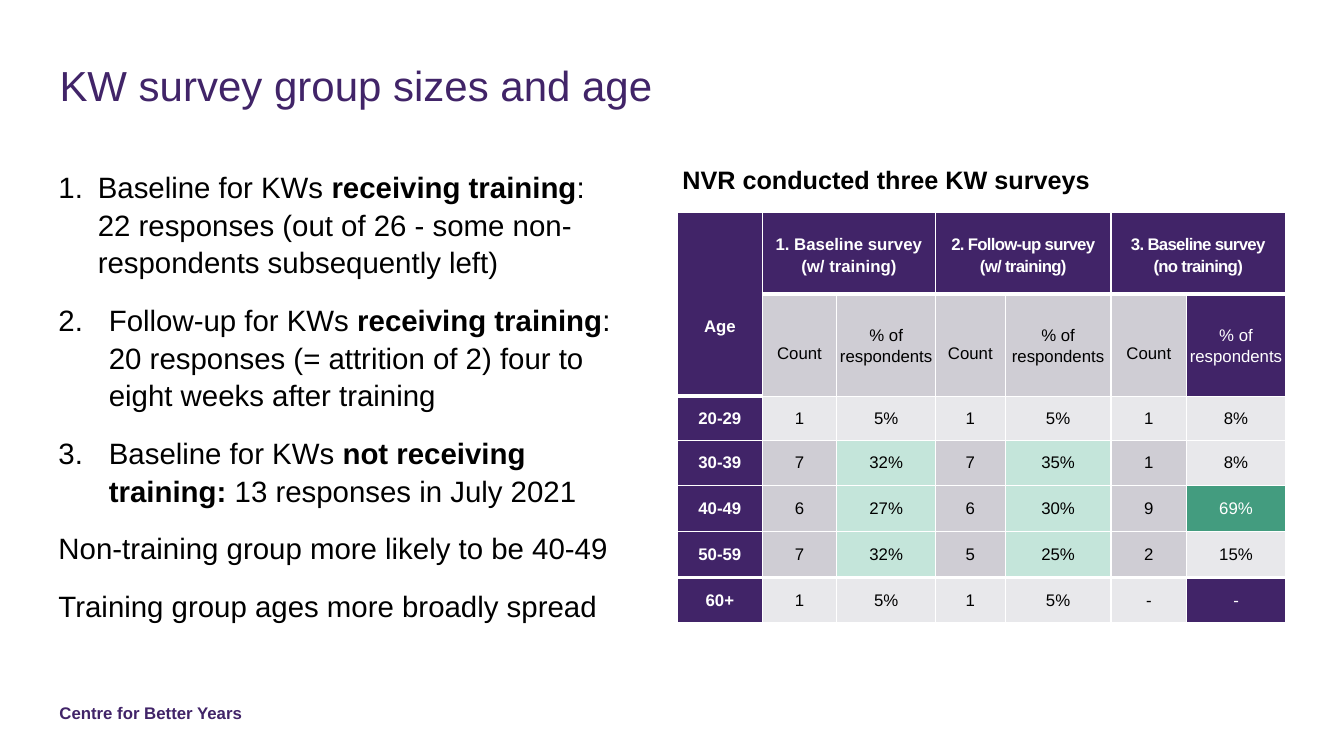
import pptx
import pptx.dml.color
import pptx.enum.text
import pptx.oxml
import pptx.oxml.ns
import pptx.util

PX = 9144
PURPLE, WHITE, BLACK = "412468", "FFFFFF", "000000"
LIGHT, GREY, MINT, GREEN = "E8E8EB", "CFCDD4", "C4E5DA", "439C7F"
CENTER = pptx.enum.text.PP_ALIGN.CENTER
TOP = pptx.enum.text.MSO_ANCHOR.TOP
MIDDLE = pptx.enum.text.MSO_ANCHOR.MIDDLE


def px(length):
    return pptx.util.Emu(length * PX)


def colour(value):
    return pptx.dml.color.RGBColor.from_string(value)


def element(tag, attributes="", inner=""):
    namespace = pptx.oxml.ns.nsdecls("a")
    return pptx.oxml.parse_xml(f"<a:{tag} {namespace} {attributes}>{inner}</a:{tag}>")


class SurveySlide:
    font = "Arial"

    def __init__(self, deck):
        self.slide = deck.slides.add_slide(deck.slide_layouts[5])

    def add_text(self, paragraph, text, size, ink, bold=False, spacing=0):
        for number, line in enumerate(text.split("\n")):
            if number:
                paragraph.add_line_break()
            run = paragraph.add_run()
            run.text = line
            run.font.name = self.font
            run.font.size = pptx.util.Pt(size)
            run.font.bold = bold
            run.font.color.rgb = colour(ink)
            if spacing:
                run._r.get_or_add_rPr().set("spc", str(spacing))

    def frame(self, shape, place, inset=(0, 0)):
        shape.left, shape.top, shape.width, shape.height = map(px, place)
        frame = shape.text_frame
        frame.word_wrap = True
        frame.auto_size = pptx.enum.text.MSO_AUTO_SIZE.NONE
        frame.vertical_anchor = TOP
        frame.margin_left = frame.margin_right = px(inset[0])
        frame.margin_top = frame.margin_bottom = px(inset[1])
        return frame

    def title(self, text, place):
        heading = self.frame(self.slide.shapes.title, place).paragraphs[0]
        heading.alignment = pptx.enum.text.PP_ALIGN.LEFT
        heading.line_spacing = pptx.util.Pt(36)
        self.add_text(heading, text, 30, PURPLE)

    def box(self, place, inset=(0, 0)):
        return self.frame(self.slide.shapes.add_textbox(0, 0, 0, 0), place, inset)

    def label(self, text, place, size, ink, inset=(0, 0)):
        self.add_text(self.box(place, inset).paragraphs[0], text, size, ink, True)

    def findings(self, items, place):
        body = self.box(place)
        for number, (indent, parts) in enumerate(items):
            paragraph = body.paragraphs[0] if number == 0 else body.add_paragraph()
            paragraph.line_spacing = pptx.util.Pt(27)
            paragraph.space_after = pptx.util.Pt(14)
            if indent:
                properties = paragraph._p.get_or_add_pPr()
                properties.set("marL", str(px(indent)))
                properties.set("indent", str(-px(indent)))
                properties.append(element("buFont", f'typeface="{self.font}"'))
                properties.append(element("buAutoNum", 'type="arabicPeriod"'))
            for text, bold in parts:
                self.add_text(paragraph, text, 21, BLACK, bold)

    def table(self, place, widths, heights):
        frame = self.slide.shapes.add_table(len(heights), len(widths), *map(px, place))
        grid = frame.table
        grid.first_row = grid.horz_banding = False
        for column, width in zip(grid.columns, widths):
            column.width = px(width)
        for row, height in zip(grid.rows, heights):
            row.height = px(height)
        for row in range(len(heights)):
            for column in range(len(widths)):
                self.borders(grid.cell(row, column), row, column)
        return grid

    def borders(self, cell, row, column):
        heavy = (1, 2, 6) if column == 0 else (1, 6)
        lines = {"L": 1, "R": 1,
                 "T": 3 if row in heavy else 1,
                 "B": 3 if row + 1 in heavy else 1}
        fill = f'<a:solidFill><a:srgbClr val="{WHITE}"/></a:solidFill>'
        for side, width in lines.items():
            cell._tc.get_or_add_tcPr().append(
                element(f"ln{side}", f'w="{pptx.util.Pt(width)}"', fill))

    def cell(self, cell, text, fill, ink=BLACK, bold=False, drop=0, leading=None, spacing=0):
        cell.fill.solid()
        cell.fill.fore_color.rgb = colour(fill)
        cell.vertical_anchor = MIDDLE
        cell.margin_left = cell.margin_right = cell.margin_bottom = 0
        cell.margin_top = px(drop)
        paragraph = cell.text_frame.paragraphs[0]
        paragraph.alignment = CENTER
        if leading:
            paragraph.line_spacing = leading
        self.add_text(paragraph, text, 12, ink, bold, spacing)


def share_colours(share):
    if share == "-":
        return PURPLE, WHITE
    percent = int(share.rstrip("%"))
    if percent > 50:
        return GREEN, WHITE
    return (MINT if percent >= 25 else LIGHT), BLACK


def age_table(survey):
    grid = survey.table((672, 211, 603, 407), (84, 74, 98, 69, 105, 75, 98),
                        (81, 101, 44, 45, 45, 46, 45))
    grid.cell(0, 0).merge(grid.cell(1, 0))
    survey.cell(grid.cell(0, 0), "Age", PURPLE, WHITE, True, drop=44)
    groups = [("1. Baseline survey\n(w/ training)", 0),
              ("2. Follow-up survey\n(w/ training)", -50),
              ("3. Baseline survey\n(no training)", -50)]
    for number, (group, spacing) in enumerate(groups):
        count, share = 2 * number + 1, 2 * number + 2
        grid.cell(0, count).merge(grid.cell(0, share))
        survey.cell(grid.cell(0, count), group, PURPLE, WHITE, True, drop=2,
                    leading=pptx.util.Pt(15.5), spacing=spacing)
        survey.cell(grid.cell(1, count), "Count", GREY, drop=16)
        last = number == 2
        survey.cell(grid.cell(1, share), "% of\nrespondents", PURPLE if last else GREY,
                    WHITE if last else BLACK, leading=1.11)
    ages = [("20-29", "1", "5%", "1", "5%", "1", "8%"),
            ("30-39", "7", "32%", "7", "35%", "1", "8%"),
            ("40-49", "6", "27%", "6", "30%", "9", "69%"),
            ("50-59", "7", "32%", "5", "25%", "2", "15%"),
            ("60+", "1", "5%", "1", "5%", "-", "-")]
    for row, (age, *values) in enumerate(ages, 2):
        survey.cell(grid.cell(row, 0), age, PURPLE, WHITE, True)
        count_fill = LIGHT if row in (2, 6) else GREY
        for column, value in enumerate(values, 1):
            fill, ink = (count_fill, BLACK) if column % 2 else share_colours(value)
            survey.cell(grid.cell(row, column), value, fill, ink)


def main():
    deck = pptx.Presentation()
    deck.slide_width, deck.slide_height = px(1333), px(750)
    survey = SurveySlide(deck)
    survey.title("KW survey group sizes and age", (59, 59, 1215, 113))
    survey.findings([
        (39, [("Baseline for KWs", False), (" receiving training", True),
              (": \n22 responses (out of 26 - some non-respondents subsequently left)", False)]),
        (50, [("Follow-up for KWs", False), (" receiving training", True),
              (": \n20 responses (= attrition of 2) four to eight weeks after training", False)]),
        (50, [("Baseline for KWs", False), (" not receiving training:", True),
              (" 13 responses in July 2021", False)]),
        (0, [("Non-training group more likely to be 40-49", False)]),
        (0, [("Training group ages more broadly spread", False)]),
    ], (58, 165, 559, 511))
    age_table(survey)
    survey.label("NVR conducted three KW surveys", (667, 158, 514, 71), 18, BLACK, (10, 5))
    survey.label("Centre for Better Years", (59, 697, 356, 20), 12, PURPLE)
    deck.save("out.pptx")


if __name__ == "__main__":
    main()
